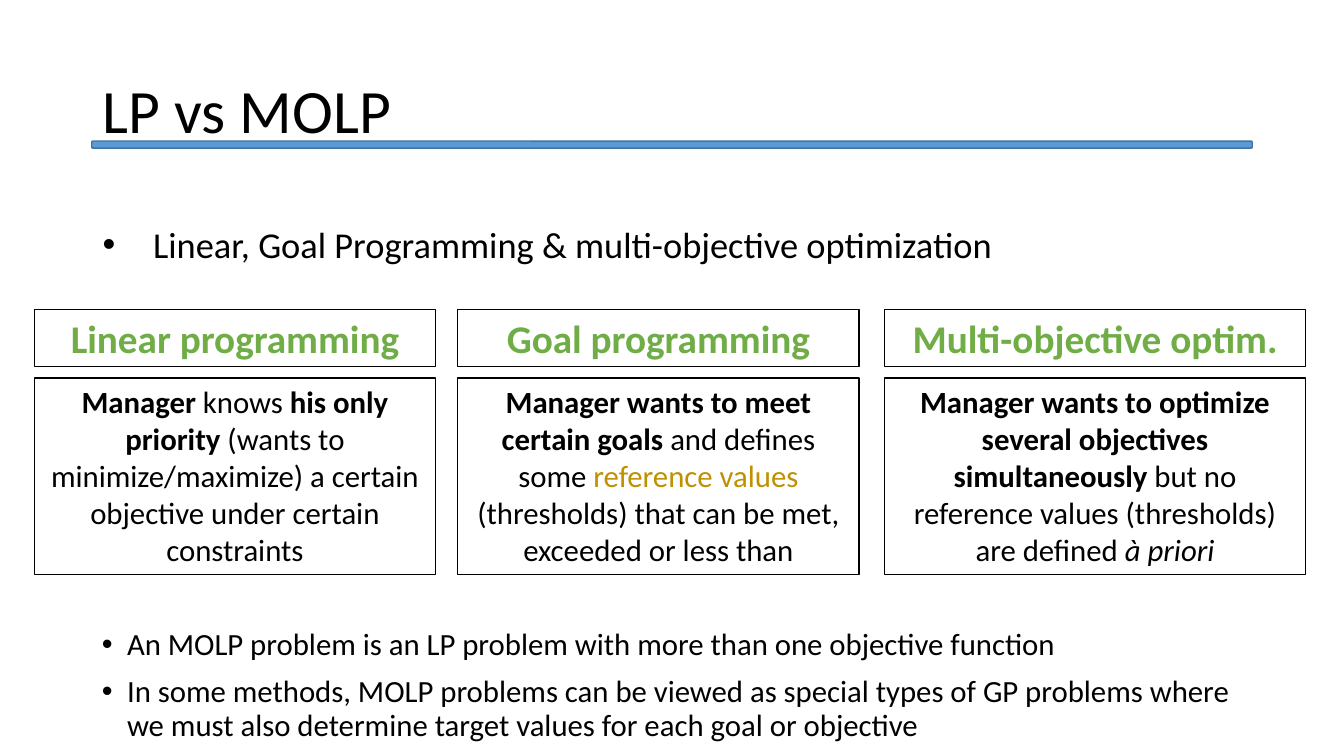
"""Builds the slide comparing LP, goal programming and multi-objective optimization."""
import dataclasses

import lxml.etree
import pptx
import pptx.dml.color
import pptx.enum.shapes
import pptx.enum.text
import pptx.oxml.ns
import pptx.util

Inches = pptx.util.Inches
Align = pptx.enum.text.PP_ALIGN
Anchor = pptx.enum.text.MSO_ANCHOR
AutoSize = pptx.enum.text.MSO_AUTO_SIZE
Preset = pptx.enum.shapes.MSO_SHAPE


@dataclasses.dataclass(frozen=True)
class Theme:
    """Holds the font, colours and type sizes of the slide."""
    font: str = "Calibri"
    ink: str = "000000"
    heading: str = "70AD47"
    accent: str = "BF9000"
    bar: str = "5B9BD5"
    bar_line: str = "43739E"
    title_size: int = 44
    heading_size: int = 28
    lead_size: int = 26
    body_size: int = 22


def rgb(color):
    """Turns a hexadecimal string into a colour."""
    return pptx.dml.color.RGBColor.from_string(color)


def add_run(paragraph, text, *, font, size, color, bold=False, italic=False):
    """Adds a formatted run to a paragraph."""
    run = paragraph.add_run()
    run.text = text
    run.font.name = font
    run.font.size = pptx.util.Pt(size)
    run.font.color.rgb = rgb(color)
    run.font.bold = bold
    run.font.italic = italic


def add_bullet(paragraph, indent):
    """Gives a paragraph a round bullet with a hanging indent."""
    properties = paragraph._p.get_or_add_pPr()
    properties.set("marL", str(Inches(indent)))
    properties.set("indent", str(-Inches(indent)))
    for tag, attribute, value in (("a:buFont", "typeface", "Arial"), ("a:buChar", "char", "•")):
        lxml.etree.SubElement(properties, pptx.oxml.ns.qn(tag)).set(attribute, value)


class SlideBuilder:
    """Adds styled elements to the current slide."""

    def __init__(self, slide, theme):
        """Keeps the slide and its theme."""
        self.slide = slide
        self.theme = theme

    def text_run(self, paragraph, text, size, color=None, **style):
        """Adds text in the theme font."""
        add_run(paragraph, text, font=self.theme.font, size=size,
                color=color or self.theme.ink, **style)

    def place(self, shape, left, top, width, height):
        """Moves and sizes a placeholder."""
        shape.left, shape.top = Inches(left), Inches(top)
        shape.width, shape.height = Inches(width), Inches(height)
        shape.text_frame.auto_size = AutoSize.NONE

    def title(self, text, *box):
        """Fills the title placeholder."""
        shape = self.slide.shapes.title
        self.place(shape, *box)
        shape.text_frame.vertical_anchor = Anchor.MIDDLE
        paragraph = shape.text_frame.paragraphs[0]
        paragraph.alignment = Align.LEFT
        paragraph.line_spacing = 0.9
        self.text_run(paragraph, text, self.theme.title_size)

    def bullets(self, items, *box):
        """Fills the body placeholder with a list."""
        shape = self.slide.placeholders[1]
        self.place(shape, *box)
        frame = shape.text_frame
        for index, item in enumerate(items):
            paragraph = frame.add_paragraph() if index else frame.paragraphs[0]
            paragraph.line_spacing = 0.9
            paragraph.space_before = pptx.util.Pt(10)
            add_bullet(paragraph, 0.25)
            self.text_run(paragraph, item, self.theme.body_size)

    def lead(self, text, *box):
        """Adds the bulleted lead line."""
        shape = self.slide.shapes.add_textbox(*map(Inches, box))
        shape.text_frame.word_wrap = True
        paragraph = shape.text_frame.paragraphs[0]
        add_bullet(paragraph, 0.5)
        self.text_run(paragraph, text, self.theme.lead_size)

    def box(self, runs, size, *box):
        """Adds an outlined box of centred text."""
        shape = self.slide.shapes.add_shape(Preset.RECTANGLE, *map(Inches, box))
        shape.shadow.inherit = False
        shape.fill.background()
        shape.line.color.rgb = rgb(self.theme.ink)
        shape.line.width = pptx.util.Pt(0.75)
        frame = shape.text_frame
        frame.word_wrap = True
        frame.auto_size = AutoSize.SHAPE_TO_FIT_TEXT
        frame.vertical_anchor = Anchor.TOP
        paragraph = frame.paragraphs[0]
        paragraph.alignment = Align.CENTER
        for text, style in runs:
            self.text_run(paragraph, text, size, **style)

    def bar(self, *box):
        """Adds the rounded bar under the title."""
        shape = self.slide.shapes.add_shape(Preset.ROUNDED_RECTANGLE, *map(Inches, box))
        shape.shadow.inherit = False
        shape.fill.solid()
        shape.fill.fore_color.rgb = rgb(self.theme.bar)
        shape.line.color.rgb = rgb(self.theme.bar_line)
        shape.line.width = pptx.util.Pt(1)


def main():
    """Builds and saves the presentation."""
    theme = Theme()
    presentation = pptx.Presentation()
    presentation.slide_width, presentation.slide_height = Inches(13.33), Inches(7.5)
    slide = presentation.slides.add_slide(presentation.slide_layouts[1])
    builder = SlideBuilder(slide, theme)
    bold = {"bold": True}
    methods = [
        (0.34, 3.98, "Linear programming", [
            ("Manager ", bold), ("knows", {}), (" his only priority ", bold),
            ("(wants to minimize/maximize) a certain objective under certain constraints", {})]),
        (4.54, 3.98, "Goal programming", [
            ("Manager wants to meet certain goals ", bold), ("and defines some ", {}),
            ("reference values ", {"color": theme.accent}),
            ("(thresholds) that can be met, exceeded or less than", {})]),
        (8.77, 4.18, "Multi-objective optim.", [
            ("Manager wants to optimize several objectives simultaneously ", bold),
            ("but no reference values (thresholds) are defined ", {}),
            ("à priori", {"italic": True})]),
    ]
    builder.title("LP vs MOLP", 0.92, 0.4, 11.5, 1.45)
    builder.bar(0.91, 1.4, 11.51, 0.07)
    builder.lead("Linear, Goal Programming & multi-objective optimization", 0.92, 2.15, 9.69, 0.54)
    for left, width, heading, description in methods:
        heading_runs = [(heading, {"color": theme.heading, "bold": True})]
        builder.box(heading_runs, theme.heading_size, left, 3.07, width, 0.57)
        builder.box(description, theme.body_size, left, 3.75, width, 1.95)
    builder.bullets([
        "An MOLP problem is an LP problem with more than one objective function",
        "In some methods, MOLP problems can be viewed as special types of GP problems where "
        "we must also determine target values for each goal or objective",
    ], 0.91, 6.19, 11.5, 1.24)
    presentation.save("out.pptx")


if __name__ == "__main__":
    main()
